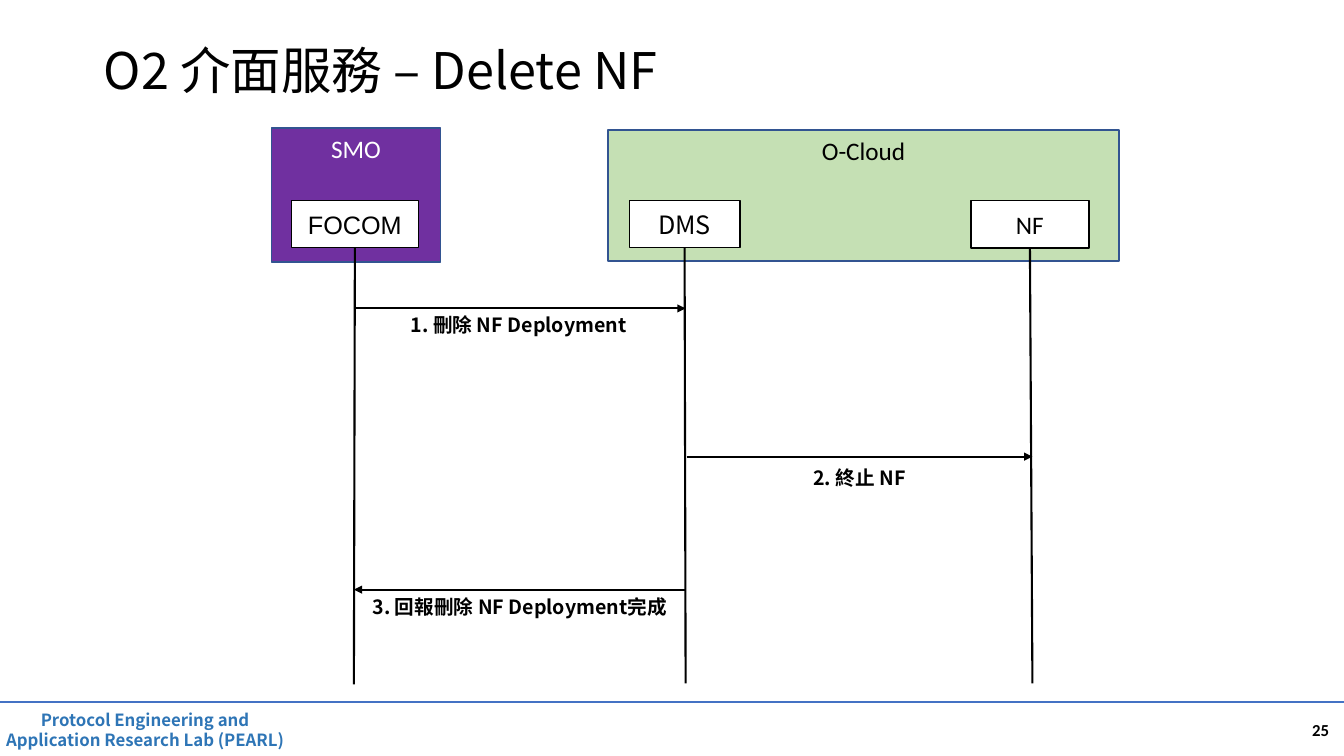
from lxml.etree import SubElement
from pptx import Presentation
from pptx.dml.color import RGBColor
from pptx.enum.shapes import MSO_CONNECTOR, MSO_SHAPE
from pptx.enum.text import MSO_ANCHOR, PP_ALIGN
from pptx.oxml.ns import qn
from pptx.util import Pt

PX = 9144  # EMU per px, 100 px to the inch
WIDE, HIGH = 1333, 750
SANS, CAL = "Noto Sans CJK SC", "Calibri"
BLACK, WHITE, EDGE = "000000", "FFFFFF", "325491"

TITLE = "O2 介面服務 – Delete NF"
LAB = "Protocol Engineering and Application Research Lab (PEARL)"
PAGE = "25"

# name, box (left, top, width, height), fill, text colour
GROUPS = [
    ("SMO", (269, 127, 168, 133), "7030A0", WHITE),
    ("O-Cloud", (603, 129, 507, 130), "C5E0B4", BLACK),
]

# name, left, width, font, border, foot of lifeline (x, y)
ROLES = [
    ("FOCOM", 289, 126, "Arial", 0.75, (351, 679)),
    ("DMS", 624, 110, SANS, 0.75, (680, 678)),
    ("NF", 963, 117, CAL, 1, (1024, 678)),
]
ROLE_TOP, ROLE_HIGH = 199, 47

# text, start x, end x, y of arrow, label box (left, top, width)
CALLS = [
    ("1. 刪除 NF Deployment", 352, 680, 306, (351, 306, 327)),
    ("2. 終止 NF", 681, 1024, 453, (682, 457, 341)),
    ("3. 回報刪除 NF Deployment完成", 680, 351, 585, (350, 585, 331)),
]
LABEL_HIGH = 34


def emu(*px):
    return [round(n * PX) for n in px]


def color(code):
    return RGBColor.from_string(code)


def write(shape, text, size=18, font=SANS, ink=BLACK, bold=False,
          align=PP_ALIGN.CENTER, anchor=MSO_ANCHOR.TOP, lead=None):
    frame = shape.text_frame
    frame.word_wrap = True
    frame.vertical_anchor = anchor
    para = frame.paragraphs[0]
    para.alignment = align
    para.line_spacing = lead
    run = para.add_run()
    run.text = text
    face = run.font
    face.size, face.bold, face.name = Pt(size), bold, font
    face.color.rgb = color(ink)
    east = SubElement(run._r.get_or_add_rPr(), qn("a:ea"))
    east.set("typeface", font)


def label(box, text, **style):
    write(slide.shapes.add_textbox(*emu(*box)), text, **style)


def rect(box, fill, edge, width):
    shape = slide.shapes.add_shape(MSO_SHAPE.RECTANGLE, *emu(*box))
    shape.shadow.inherit = False
    shape.fill.solid()
    shape.fill.fore_color.rgb = color(fill)
    shape.line.color.rgb = color(edge)
    shape.line.width = Pt(width)
    return shape


def line(start, end, ink=BLACK, arrow=False):
    link = slide.shapes.add_connector(
        MSO_CONNECTOR.STRAIGHT, *emu(*start, *end))
    link.line.color.rgb = color(ink)
    link.line.width = Pt(1.5)
    if arrow:
        tip = SubElement(link.line._get_or_add_ln(), qn("a:tailEnd"))
        tip.set("type", "triangle")
    SubElement(link._element.spPr, qn("a:effectLst"))
    return link


deck = Presentation()
deck.slide_width, deck.slide_height = emu(WIDE, HIGH)
slide = deck.slides.add_slide(deck.slide_layouts[6])

# Footer
label((1028, 704, 300, 40), PAGE, size=12, font=CAL, bold=True,
      align=PP_ALIGN.RIGHT, anchor=MSO_ANCHOR.MIDDLE)
line((0, 696), (WIDE, 696), ink="4472C4")
label((-12, 699, 312, 50), LAB, size=12, ink="2E75B6", bold=True)

# Groups and title
for name, box, fill, ink in GROUPS:
    write(rect(box, fill, EDGE, 1), name, font=CAL, ink=ink)
label((93, 0, 1150, 145), TITLE, size=36, align=PP_ALIGN.LEFT,
      anchor=MSO_ANCHOR.MIDDLE, lead=0.9)

# Roles with their lifelines
for name, left, width, font, edge, foot in ROLES:
    role = rect((left, ROLE_TOP, width, ROLE_HIGH), WHITE, BLACK, edge)
    write(role, name, font=font, anchor=MSO_ANCHOR.MIDDLE)
    life = line((left + width / 2, ROLE_TOP + ROLE_HIGH), foot)
    life.begin_connect(role, 2)

# Messages
for text, start, end, y, (left, top, width) in CALLS:
    line((start, y), (end, y), arrow=True)
    label((left, top, width, LABEL_HIGH), text, size=14, bold=True)

deck.save("out.pptx")
